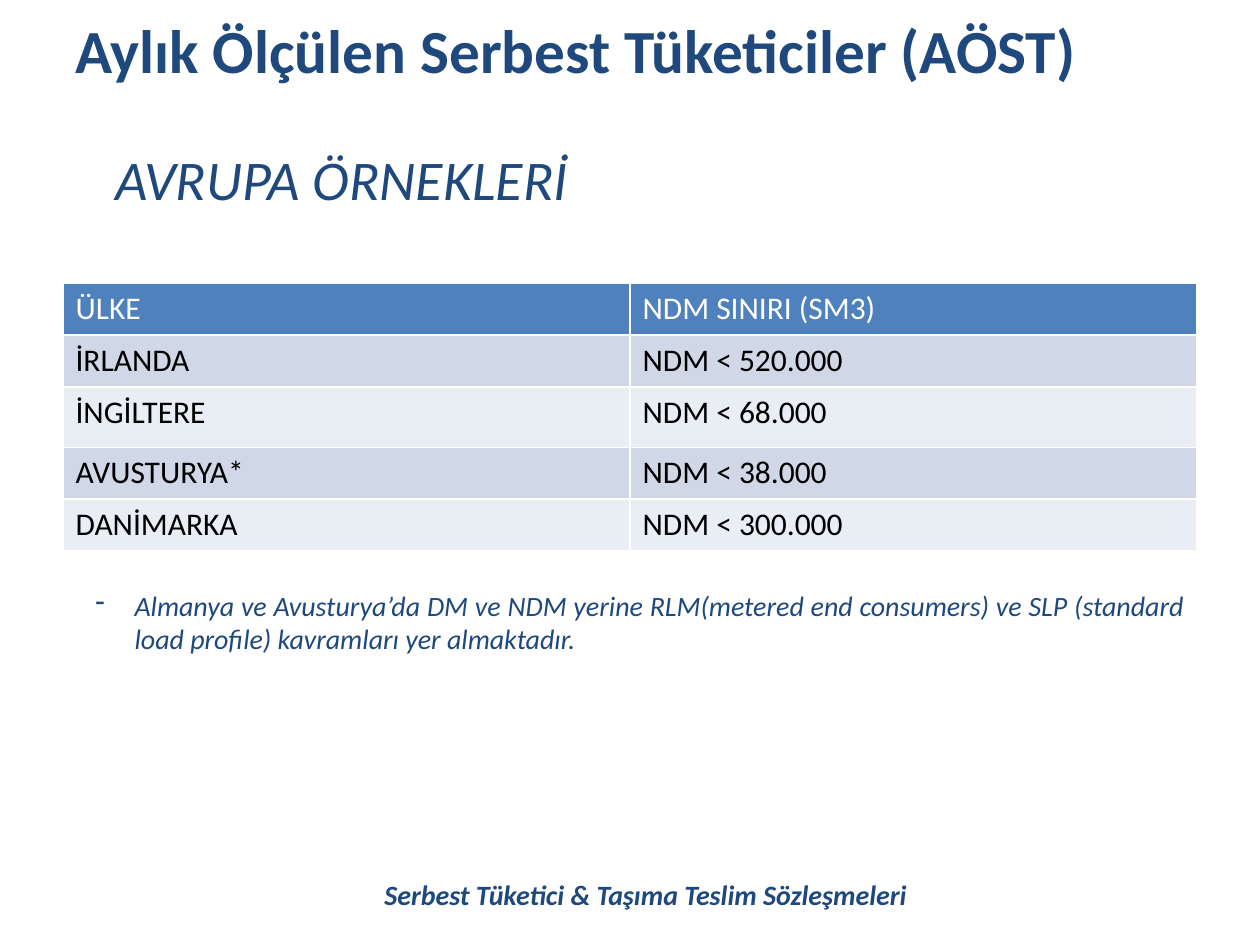
import pptx
import pptx.dml.color
import pptx.enum.text
import pptx.util
from dataclasses import dataclass
from lxml import etree

Inches = pptx.util.Inches
Align = pptx.enum.text.PP_ALIGN
Anchor = pptx.enum.text.MSO_ANCHOR


@dataclass(frozen=True)
class Theme:
    font: str = "Calibri"
    navy: str = "1F497D"
    white: str = "FFFFFF"
    black: str = "000000"
    header: str = "4F81BD"
    bands: tuple = ("D0D8E8", "E9EDF4")
    title: int = 35
    subtitle: int = 32
    cell: int = 18
    note: int = 16


theme = Theme()


def write(frame, text, size, color=theme.navy, bold=False, italic=False,
          align=Align.LEFT, margin=0, indent=0, bullet=None):
    para = frame.paragraphs[0]
    para.alignment = align
    if margin:
        properties = para._p.get_or_add_pPr()
        properties.set("marL", str(Inches(margin)))
        properties.set("indent", str(Inches(indent)))
        if bullet:
            mark = etree.SubElement(properties, pptx.oxml.ns.qn("a:buChar"))
            mark.set("char", bullet)
    span = para.add_run()
    span.text = text
    span.font.name = theme.font
    span.font.size = pptx.util.Pt(size)
    span.font.bold = bold
    span.font.italic = italic
    span.font.color.rgb = pptx.dml.color.RGBColor.from_string(color)


def add_text(page, left, top, width, height, text, size, anchor=Anchor.TOP, **style):
    box = page.shapes.add_textbox(Inches(left), Inches(top), Inches(width), Inches(height))
    box.text_frame.word_wrap = True
    box.text_frame.vertical_anchor = anchor
    write(box.text_frame, text, size, **style)


deck = pptx.Presentation()
deck.slide_width, deck.slide_height = Inches(10), Inches(7.5)
page = deck.slides.add_slide(deck.slide_layouts[6])

# Title and subtitle
add_text(page, 0.5, 0.05, 9, 1.25, "Aylık Ölçülen Serbest Tüketiciler (AÖST)",
         theme.title, bold=True)
add_text(page, 0.52, 1.1, 4.65, 0.64, "AVRUPA ÖRNEKLERİ",
         theme.subtitle, italic=True, margin=0.3)

# Footer
add_text(page, 2.17, 6.9, 5.91, 0.39, "Serbest Tüketici & Taşıma Teslim Sözleşmeleri",
         theme.note, anchor=Anchor.MIDDLE, bold=True, italic=True, align=Align.CENTER)

# Country limits table; the default table style draws the white borders
rows = [
    ("ÜLKE", "NDM SINIRI (SM3)"),
    ("İRLANDA", "NDM < 520.000"),
    ("İNGİLTERE", "NDM < 68.000"),
    ("AVUSTURYA*", "NDM < 38.000"),
    ("DANİMARKA", "NDM < 300.000"),
]
heights = [0.41, 0.41, 0.48, 0.41, 0.41]
table = page.shapes.add_table(len(rows), 2, Inches(0.5), Inches(2.25),
                              Inches(9), Inches(sum(heights))).table
for index, (texts, height) in enumerate(zip(rows, heights)):
    table.rows[index].height = Inches(height)
    fill = theme.bands[(index - 1) % 2] if index else theme.header
    color = theme.black if index else theme.white
    for column, text in enumerate(texts):
        cell = table.cell(index, column)
        cell.fill.solid()
        cell.fill.fore_color.rgb = pptx.dml.color.RGBColor.from_string(fill)
        write(cell.text_frame, text, theme.cell, color=color)

# Note below the table
add_text(page, 0.66, 4.62, 8.84, 0.64,
         "Almanya ve Avusturya’da DM ve NDM yerine RLM(metered end consumers) ve SLP "
         "(standard load profile) kavramları yer almaktadır.",
         theme.note, italic=True, align=Align.JUSTIFY, margin=0.31, indent=-0.31, bullet="-")

deck.save("out.pptx")
